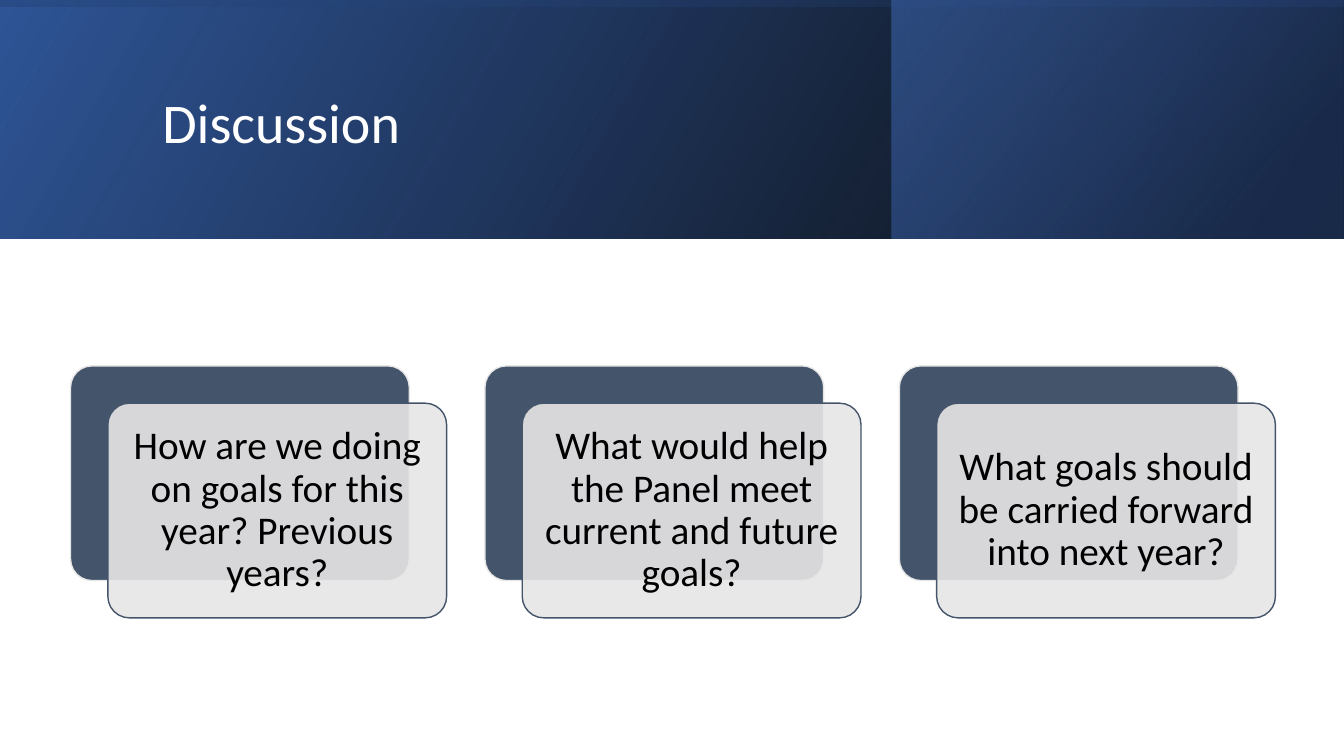
import pptx
import pptx.dml.color
import pptx.enum.shapes
import pptx.enum.text
import pptx.oxml
import pptx.oxml.ns
import pptx.util

Inches = pptx.util.Inches
Pt = pptx.util.Pt
RGBColor = pptx.dml.color.RGBColor
Shapes = pptx.enum.shapes.MSO_SHAPE
Align = pptx.enum.text.PP_ALIGN
Anchor = pptx.enum.text.MSO_ANCHOR
qn = pptx.oxml.ns.qn

BLACK = RGBColor(0x00, 0x00, 0x00)
WHITE = RGBColor(0xFF, 0xFF, 0xFF)
ROYAL = RGBColor(0x2F, 0x55, 0x97)
NAVY = RGBColor(0x20, 0x38, 0x64)
AZURE = RGBColor(0x44, 0x72, 0xC4)
SLATE = RGBColor(0x44, 0x54, 0x6A)
MIST = RGBColor(0xE7, 0xE6, 0xE6)

BAND_HEIGHT = 2.37
CARD_LEFT, CARD_TOP, CARD_STEP = 0.7, 3.63, 4.11
CARD_SIZE = (3.36, 2.13)
CARD_OFFSET = 0.37

QUESTIONS = [
    "How are we doing on goals for this year? Previous years?",
    "What would help the Panel meet current and future goals?",
    "What goals should be carried forward into next year?",
]

BANDS = [
    ((0, 0, 13.33, BAND_HEIGHT), 0, 330, [(0, BLACK, 96), (100, ROYAL, 100)]),
    ((8.84, 0, 4.48, BAND_HEIGHT), 0, 320, [(19, NAVY, 68), (100, AZURE, 48)]),
    ((5.48, -5.48, BAND_HEIGHT, 13.33), 270, 350, [(23, ROYAL, 16), (99, BLACK, 45)]),
]


class DiscussionSlide:
    font = "Calibri"
    line_spacing = 0.9

    def __init__(self, deck):
        self.slide = deck.slides.add_slide(deck.slide_layouts[5])

    def set_alpha(self, color, percent):
        if percent < 100:
            alpha = pptx.oxml.parse_xml(
                '<a:alpha xmlns:a="http://schemas.openxmlformats.org/drawingml/2006/main"'
                f' val="{percent * 1000}"/>'
            )
            color.append(alpha)

    def shape(self, kind, box):
        shape = self.slide.shapes.add_shape(kind, *map(Inches, box))
        shape.shadow.inherit = False
        return shape

    def band(self, box, rotation, angle, stops):
        band = self.shape(Shapes.RECTANGLE, box)
        band.rotation = rotation
        band.line.fill.background()
        band.fill.gradient()
        band.fill.gradient_angle = 360 - angle
        for stop, (position, color, _) in zip(band.fill.gradient_stops, stops):
            stop.position = position / 100
            stop.color.rgb = color
        properties = band._element.spPr
        properties.find(qn("a:xfrm")).set("flipH", "1")
        colors = properties.find(qn("a:gradFill")).iter(qn("a:srgbClr"))
        for color, (_, _, opacity) in zip(list(colors), stops):
            self.set_alpha(color, opacity)

    def text(self, frame, words, size, color, align, margin):
        formats = {
            "word_wrap": True,
            "auto_size": pptx.enum.text.MSO_AUTO_SIZE.NONE,
            "vertical_anchor": Anchor.MIDDLE,
            "margin_left": Inches(margin),
            "margin_right": Inches(margin),
        }
        for name, value in formats.items():
            setattr(frame, name, value)
        frame.text = words
        paragraph = frame.paragraphs[0]
        paragraph.alignment = align
        paragraph.line_spacing = self.line_spacing
        lettering = {"name": self.font, "size": Pt(size)}
        for name, value in lettering.items():
            setattr(paragraph.runs[0].font, name, value)
        paragraph.runs[0].font.color.rgb = color

    def title(self, words):
        title = self.slide.shapes.title
        place = {"left": 1.51, "top": 0.38, "width": 10.63, "height": 1.72}
        for name, value in place.items():
            setattr(title, name, Inches(value))
        self.text(title.text_frame, words, 40, WHITE, Align.LEFT, 0.1)
        tree = self.slide.shapes._spTree
        tree.remove(title._element)
        tree.append(title._element)

    def panel(self, left, top, fill, line, opacity=100):
        panel = self.shape(Shapes.ROUNDED_RECTANGLE, (left, top, *CARD_SIZE))
        panel.adjustments[0] = 0.1
        panel.fill.solid()
        panel.fill.fore_color.rgb = fill
        panel.line.color.rgb = line
        panel.line.width = Pt(1)
        color = panel._element.spPr.find(qn("a:solidFill")).find(qn("a:srgbClr"))
        self.set_alpha(color, opacity)
        return panel

    def card(self, left, question):
        self.panel(left, CARD_TOP, SLATE, MIST)
        front = self.panel(left + CARD_OFFSET, CARD_TOP + CARD_OFFSET, MIST, SLATE, 90)
        self.text(front.text_frame, question, 28, BLACK, Align.CENTER, 0.15)


def main():
    deck = pptx.Presentation()
    deck.slide_width = Inches(13.33)
    deck.slide_height = Inches(7.5)
    discussion = DiscussionSlide(deck)
    for band in BANDS:
        discussion.band(*band)
    discussion.title("Discussion")
    for index, question in enumerate(QUESTIONS):
        discussion.card(CARD_LEFT + index * CARD_STEP, question)
    deck.save("out.pptx")


if __name__ == "__main__":
    main()
